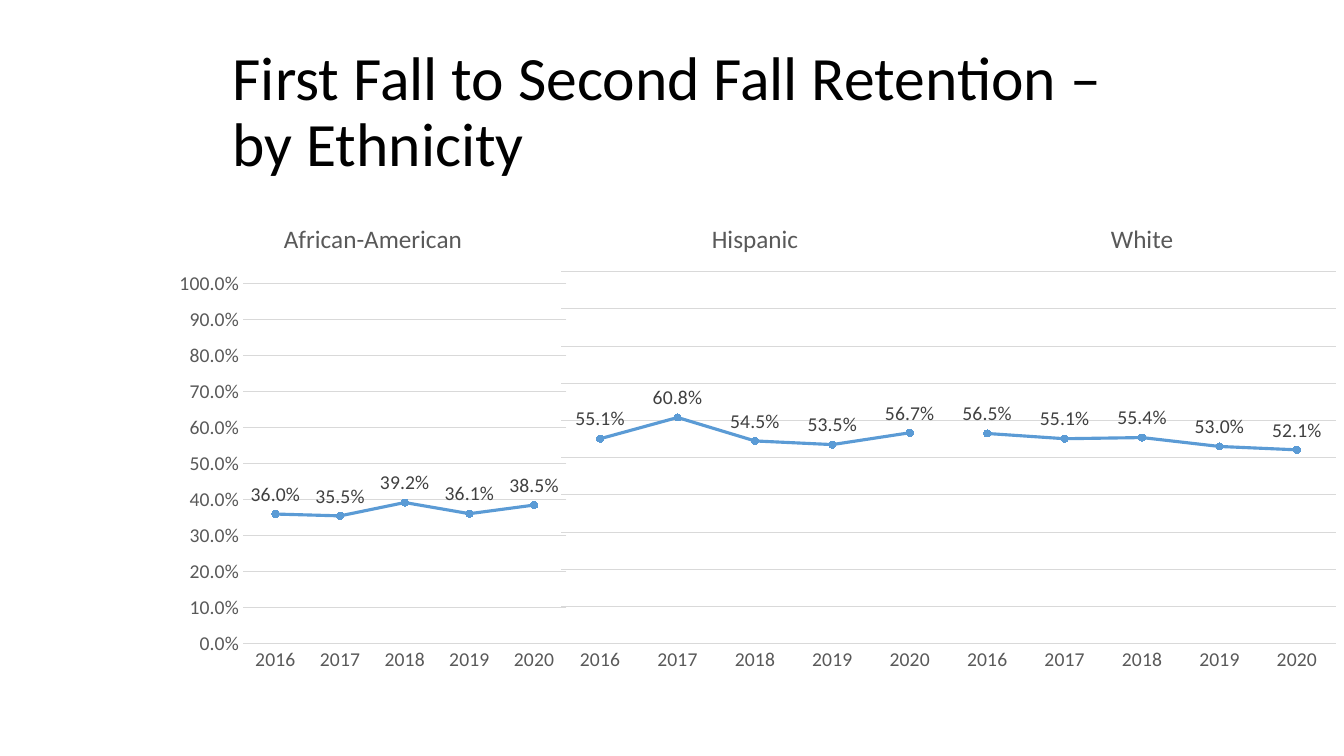
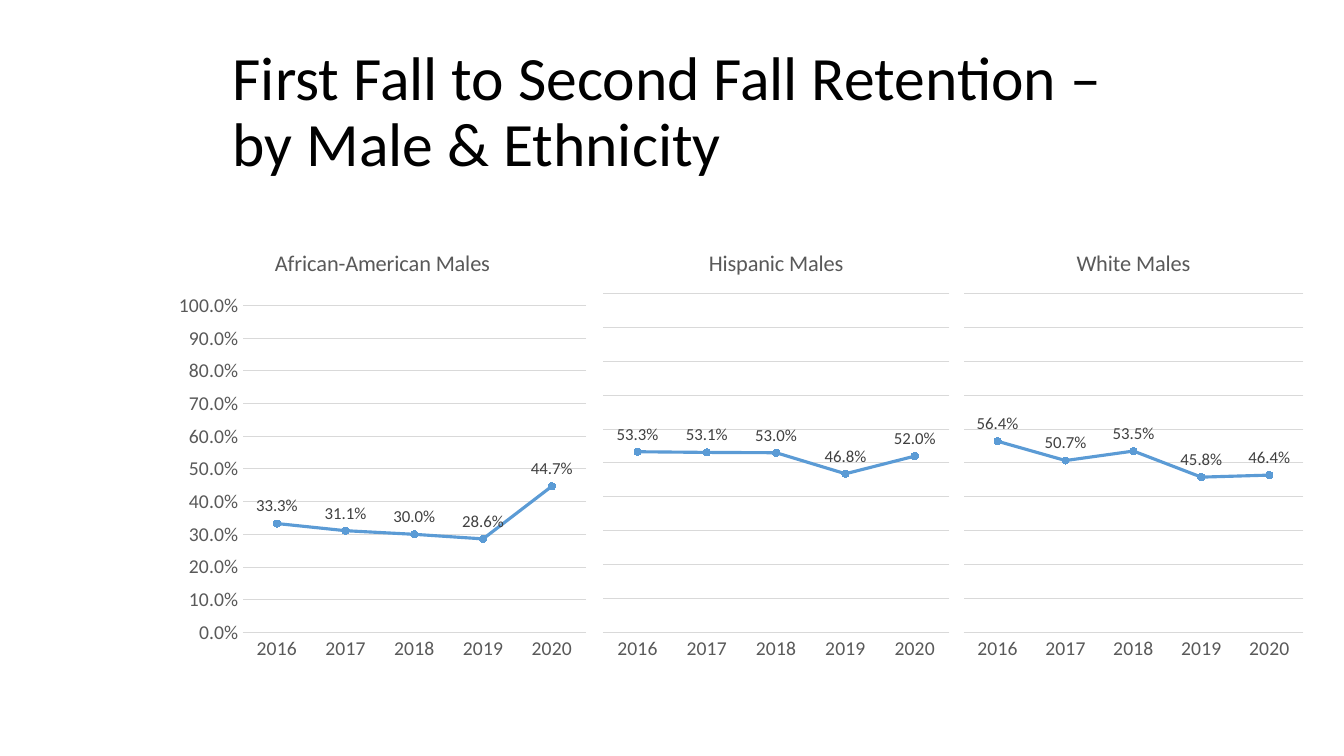
"""Build two slides of fall-to-fall retention line charts."""
import pptx
import pptx.chart.data
import pptx.dml.color
import pptx.enum.chart
import pptx.enum.text
import pptx.oxml
import pptx.oxml.ns
import pptx.util

Pt = pptx.util.Pt
FACE = "Calibri"
BLACK, GRAY, DARK = "000000", "595959", "404040"
GRID, BLUE = "D9D9D9", "5B9BD5"
YEARS = ["2016", "2017", "2018", "2019", "2020"]
HEAD = "First Fall to Second Fall Retention –"
PCT = "0.0%"

SLIDES = [
    dict(line="by Ethnicity", top=144, high=342.7, size=18, tag=14, charts=[
        ("African-American", 122.4, 288, [0.36, 0.355, 0.392, 0.361, 0.385]),
        ("Hispanic", 395.3, 288, [0.551, 0.608, 0.545, 0.535, 0.567]),
        ("White", 671.8, 288, [0.565, 0.551, 0.554, 0.53, 0.521]),
    ]),
    dict(line="by Male & Ethnicity", top=164.2, high=313.9, size=16, tag=12, charts=[
        ("African-American Males", 121.7, 303.1, [0.333, 0.311, 0.3, 0.286, 0.447]),
        ("Hispanic Males", 425.5, 257.8, [0.533, 0.531, 0.53, 0.468, 0.52]),
        ("White Males", 683.3, 252.7, [0.564, 0.507, 0.535, 0.458, 0.464]),
    ]),
]


def rgb(code):
    return pptx.dml.color.RGBColor.from_string(code)


def style(font, size, color):
    font.name = FACE
    font.size = Pt(size)
    font.bold = False
    font.color.rgb = rgb(color)


def write(frame, *lines, size, color=BLACK, space=None):
    para = frame.paragraphs[0]
    para.line_spacing = space
    for num, line in enumerate(lines):
        if num:
            para.add_line_break()
        run = para.add_run()
        run.text = line
        style(run.font, size, color)


def rule(line, color, width):
    line.color.rgb = rgb(color)
    line.width = Pt(width)


def add_title(slide, line):
    box = slide.shapes.add_textbox(Pt(159.1), Pt(28.8), Pt(735.1), Pt(104.4))
    frame = box.text_frame
    frame.word_wrap = True
    frame.vertical_anchor = pptx.enum.text.MSO_ANCHOR.MIDDLE
    write(frame, HEAD, line, size=44, space=0.9)


def clear_back(chart):
    props = pptx.oxml.parse_xml(
        f'<c:spPr {pptx.oxml.ns.nsdecls("c", "a")}>'
        "<a:noFill/><a:ln><a:noFill/></a:ln></c:spPr>")
    chart.element.find(pptx.oxml.ns.qn("c:chart")).addnext(props)


def set_axes(chart, scale):
    none = pptx.enum.chart.XL_TICK_MARK.NONE
    for axis in (chart.category_axis, chart.value_axis):
        axis.major_tick_mark = axis.minor_tick_mark = none
        style(axis.tick_labels.font, 14, GRAY)
    rule(chart.category_axis.format.line, GRID, 0.75)
    axis = chart.value_axis
    axis.minimum_scale, axis.maximum_scale, axis.major_unit = 0, 1, 0.1
    axis.tick_labels.number_format = PCT
    axis.tick_labels.number_format_is_linked = False
    axis.format.line.fill.background()
    axis.has_major_gridlines = True
    rule(axis.major_gridlines.format.line, GRID, 0.75)
    axis.visible = scale


def set_line(plot, tag):
    plot.vary_by_categories = False
    line = plot.series[0]
    line.smooth = False
    rule(line.format.line, BLUE, 2.25)
    mark = line.marker
    mark.style = pptx.enum.chart.XL_MARKER_STYLE.CIRCLE
    mark.size = 5
    mark.format.fill.solid()
    mark.format.fill.fore_color.rgb = rgb(BLUE)
    rule(mark.format.line, BLUE, 0.75)
    labels = line.data_labels
    labels.show_value = True
    labels.position = pptx.enum.chart.XL_LABEL_POSITION.ABOVE
    labels.number_format = PCT
    labels.number_format_is_linked = False
    style(labels.font, tag, DARK)


def add_chart(slide, name, values, place, size, tag, scale):
    data = pptx.chart.data.CategoryChartData(number_format=PCT)
    data.categories = YEARS
    data.add_series(name, values)
    kind = pptx.enum.chart.XL_CHART_TYPE.LINE_MARKERS
    chart = slide.shapes.add_chart(kind, *map(Pt, place), data).chart
    style(chart.font, 10, BLACK)
    clear_back(chart)
    chart.has_legend = False
    chart.has_title = True
    write(chart.chart_title.text_frame, name, size=size, color=GRAY)
    chart.chart_title.include_in_layout = False
    set_axes(chart, scale)
    set_line(chart.plots[0], tag)


def main():
    deck = pptx.Presentation()
    deck.slide_width, deck.slide_height = Pt(960), Pt(540)
    for page in SLIDES:
        slide = deck.slides.add_slide(deck.slide_layouts[6])
        add_title(slide, page["line"])
        for num, (name, left, wide, values) in enumerate(page["charts"]):
            place = (left, page["top"], wide, page["high"])
            add_chart(slide, name, values, place, page["size"], page["tag"], num == 0)
    deck.save("out.pptx")


if __name__ == "__main__":
    main()
